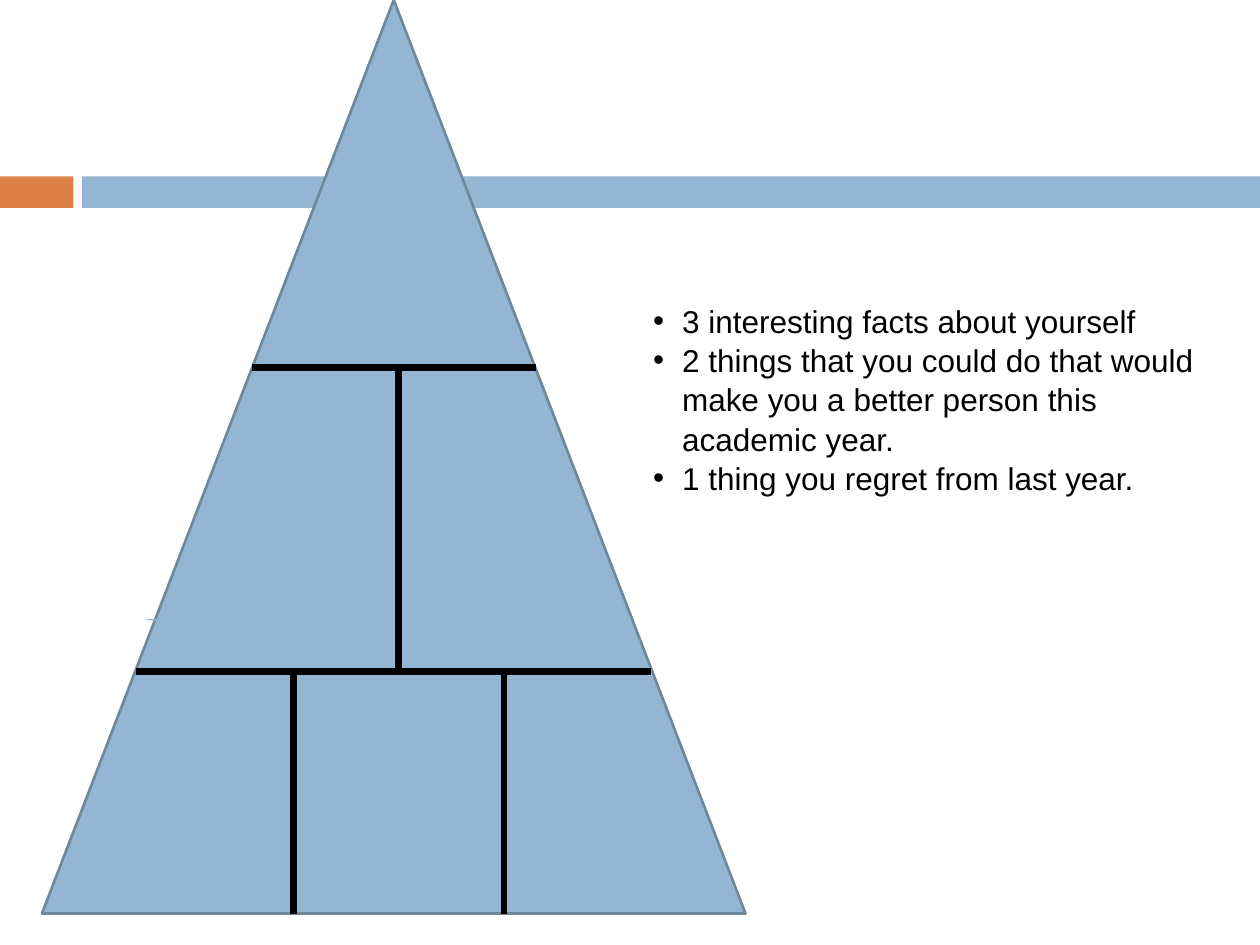
from dataclasses import dataclass

from lxml.etree import SubElement
from pptx import Presentation
from pptx.dml.color import RGBColor
from pptx.enum.shapes import MSO_CONNECTOR, MSO_SHAPE
from pptx.enum.text import MSO_ANCHOR, MSO_AUTO_SIZE, PP_ALIGN
from pptx.oxml.ns import qn
from pptx.util import Inches, Pt

COLS, ROWS = 120, 90  # square grid cells, twelve to the inch


@dataclass(frozen=True)
class Theme:
    blue: str = "94B6D2"
    orange: str = "DD8047"
    outline: str = "6D879B"
    black: str = "000000"
    font: str = "Arial"
    body: float = 18
    border: float = 1.5
    divider: float = 4
    hairline: float = 0.79


def write(p, text, *, font, size, color, bullet=None, indent=0.23, spacing=1.0):
    """Fill a paragraph, with a hanging bullet if one is given."""
    p.alignment = PP_ALIGN.LEFT
    p.space_before = p.space_after = Pt(0)
    p.line_spacing = spacing
    if bullet:
        pPr = p._p.get_or_add_pPr()
        pPr.set("marL", str(Inches(indent)))
        pPr.set("indent", str(-Inches(indent)))
        SubElement(pPr, qn("a:buFont")).set("typeface", font)
        SubElement(pPr, qn("a:buChar")).set("char", bullet)
    r = p.add_run()
    r.text = text
    r.font.name, r.font.size = font, Pt(size)
    r.font.color.rgb = RGBColor.from_string(color)


class Deck:
    def __init__(self, theme):
        self.theme = theme
        self.prs = Presentation()
        self.prs.slide_width, self.prs.slide_height = Inches(10), Inches(7.5)
        self.s = None

    def x(self, col):
        return round(self.prs.slide_width * col / COLS)

    def y(self, row):
        return round(self.prs.slide_height * row / ROWS)

    def add_slide(self):
        """Start a slide that keeps only the body placeholder."""
        self.s = self.prs.slides.add_slide(self.prs.slide_layouts[1])
        title = self.s.shapes.title._element
        title.getparent().remove(title)

    def shape(self, kind, col, row, cols, rows, fill, line=None):
        sp = self.s.shapes.add_shape(
            kind, self.x(col), self.y(row), self.x(cols), self.y(rows))
        sp.shadow.inherit = False
        sp.fill.solid()
        sp.fill.fore_color.rgb = RGBColor.from_string(fill)
        if line:
            sp.line.color.rgb = RGBColor.from_string(line)
            sp.line.width = Pt(self.theme.border)
        else:
            sp.line.fill.background()

    def line(self, start, end, color, width):
        c = self.s.shapes.add_connector(
            MSO_CONNECTOR.STRAIGHT,
            self.x(start[0]), self.y(start[1]), self.x(end[0]), self.y(end[1]))
        c.line.color.rgb = RGBColor.from_string(color)
        c.line.width = Pt(width)
        SubElement(c._element.spPr, qn("a:effectLst"))

    def bullets(self, col, row, cols, rows, items):
        t = self.theme
        sp = self.s.placeholders[1]
        sp.left, sp.top = self.x(col), self.y(row)
        sp.width, sp.height = self.x(cols), self.y(rows)
        # Shapes drawn so far stay behind the list.
        self.s.shapes._spTree.append(sp._element)
        tf = sp.text_frame
        tf.word_wrap = True
        tf.auto_size = MSO_AUTO_SIZE.SHAPE_TO_FIT_TEXT
        tf.vertical_anchor = MSO_ANCHOR.TOP
        for i, item in enumerate(items):
            p = tf.add_paragraph() if i else tf.paragraphs[0]
            write(p, item, font=t.font, size=t.body, color=t.black,
                  bullet="•", spacing=1.04)


def main():
    t = Theme()
    deck = Deck(t)
    deck.add_slide()

    band_top, band_height = 16.8, 3
    deck.shape(MSO_SHAPE.RECTANGLE, 0, band_top, 7, band_height, t.orange)
    deck.shape(MSO_SHAPE.RECTANGLE, 7.8, band_top, COLS - 7.8, band_height, t.blue)

    base = 87
    deck.shape(MSO_SHAPE.ISOSCELES_TRIANGLE, 4, 0, 67, base, t.blue, t.outline)
    deck.bullets(61, 28, 55, 23, [
        "3 interesting facts about yourself",
        "2 things that you could do that would make you a better person "
        "this academic year.",
        "1 thing you regret from last year.",
    ])

    deck.line((14, 59), (61, 61), t.blue, t.hairline)
    upper, lower = 35, 64
    for left, right, row in [(13, 62, lower), (24, 51, upper)]:
        deck.line((left, row), (right, row), t.black, t.divider)
    for col, top, bottom in [(38, upper, lower), (28, lower, base), (48, lower, base)]:
        deck.line((col, top), (col, bottom), t.black, t.divider)

    deck.prs.save("out.pptx")


if __name__ == "__main__":
    main()
